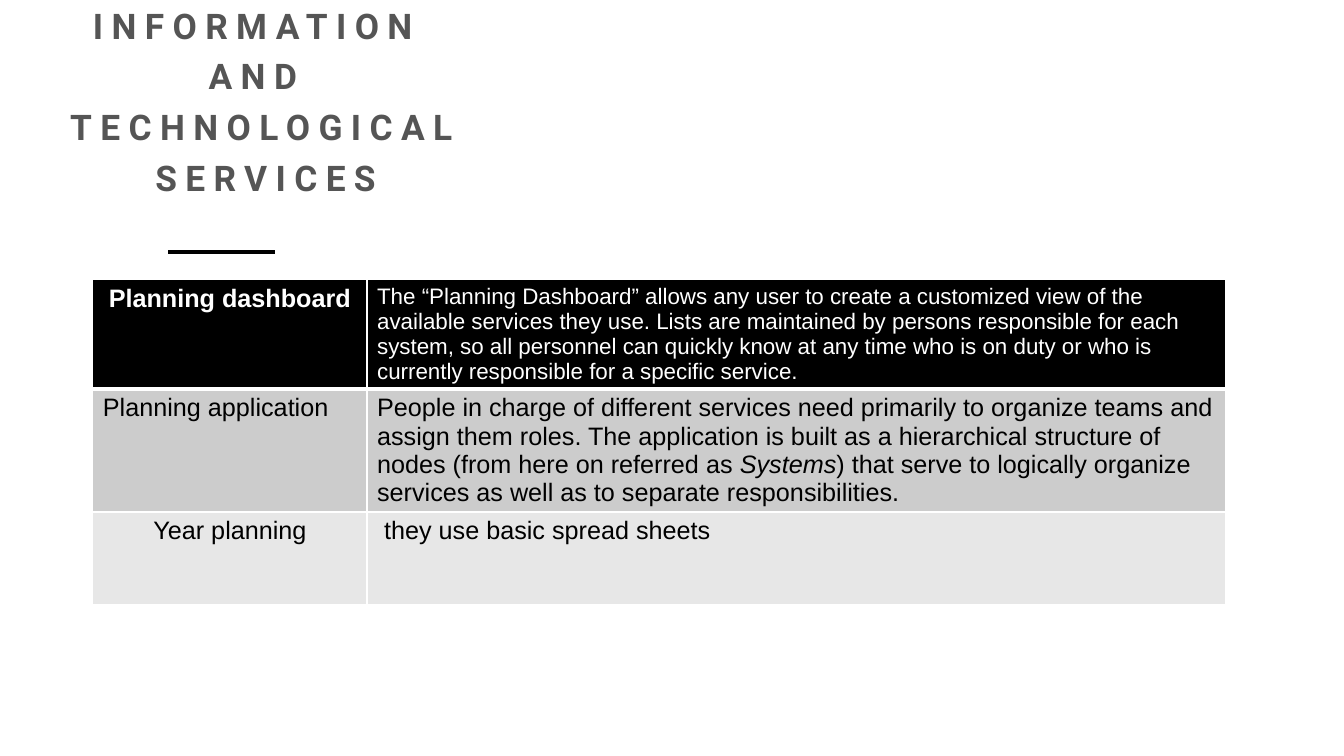
"""Build the slide on information and technological services."""
from copy import deepcopy

from lxml import etree
from pptx import Presentation
from pptx.dml.color import RGBColor
from pptx.enum import shapes, text
from pptx.oxml import ns
from pptx.util import Cm, Pt


def colour(value):
    return RGBColor.from_string(value)


def write(paragraph, words, size=18, font="Arial", ink="000000", bold=False,
          italic=False, align=text.PP_ALIGN.LEFT):
    paragraph.alignment = align
    run = paragraph.add_run()
    run.text = words
    run.font.size = Pt(size)
    run.font.name = font
    run.font.bold = bold
    run.font.italic = italic
    run.font.color.rgb = colour(ink)
    return run


CENTER = text.PP_ALIGN.CENTER
deck = Presentation()
deck.slide_width, deck.slide_height = Cm(33.87), Cm(19.05)
slide = deck.slides.add_slide(deck.slide_layouts[5])

heading = slide.shapes.title
heading.left, heading.top = Cm(-0.86), Cm(3.99)
heading.width, heading.height = Cm(15.11), Cm(1.14)
frame = heading.text_frame
frame.word_wrap = True
frame.auto_size = text.MSO_AUTO_SIZE.NONE
frame.vertical_anchor = text.MSO_ANCHOR.BOTTOM
heading_line = frame.paragraphs[0]
heading_line.line_spacing = 1.2
for number, words in enumerate(["INFORMATION ", "AND ", "TECHNOLOGICAL SERVICES"]):
    if number:
        heading_line.add_line_break()
    run = write(heading_line, words, size=25.2, font="Roboto", ink="555555",
                bold=True, align=CENTER)
    run.font._element.set("spc", "600")
for line_break in heading_line._p.findall(ns.qn("a:br")):
    line_break.append(deepcopy(run.font._element))

rule = slide.shapes.add_connector(shapes.MSO_CONNECTOR.STRAIGHT,
                                  Cm(4.24), Cm(6.35), Cm(6.93), Cm(6.35))
rule.line.color.rgb = colour("000000")
rule.line.width = Pt(2.5)
etree.SubElement(rule._element.spPr, ns.qn("a:effectLst"))

services = [
    ("000000", "FFFFFF",
     dict(words="Planning dashboard", bold=True, align=CENTER),
     [dict(words="The “Planning Dashboard” allows any user to create a customized "
                 "view of the available services they use. Lists are maintained by "
                 "persons responsible for each system, so all personnel can quickly "
                 "know at any time who is on duty or who is currently responsible "
                 "for a specific service.", size=16)]),
    ("CCCCCC", "000000",
     dict(words="Planning application"),
     [dict(words="People in charge of different services need primarily to organize "
                 "teams and assign them roles. The application is built as a "
                 "hierarchical structure of nodes (from here on referred as "),
      dict(words="Systems", italic=True),
      dict(words=") that serve to logically organize services as well as to "
                 "separate responsibilities.")]),
    ("E7E7E7", "000000",
     dict(words="Year planning", align=CENTER),
     [dict(words=" they use basic spread sheets")]),
]
table = slide.shapes.add_table(len(services), 2, Cm(2.34), Cm(7.04),
                               Cm(28.55), Cm(7.02)).table
table.columns[0].width, table.columns[1].width = Cm(6.91), Cm(21.64)
for row, (fill, ink, name, description) in enumerate(services):
    table.rows[row].height = Cm(2.34)
    for column, parts in enumerate([[name], description]):
        cell = table.cell(row, column)
        cell.fill.solid()
        cell.fill.fore_color.rgb = colour(fill)
        for part in parts:
            write(cell.text_frame.paragraphs[0], ink=ink, **part)
        properties = cell._tc.get_or_add_tcPr()
        for position, side in enumerate(["lnL", "lnR", "lnT", "lnB"]):
            under_header = (row, side) in [(0, "lnB"), (1, "lnT")]
            border = etree.Element(ns.qn(f"a:{side}"),
                                   w=str(Pt(3 if under_header else 1)))
            paint = etree.SubElement(border, ns.qn("a:solidFill"))
            etree.SubElement(paint, ns.qn("a:srgbClr"), val="FFFFFF")
            properties.insert(position, border)

deck.save("out.pptx")
